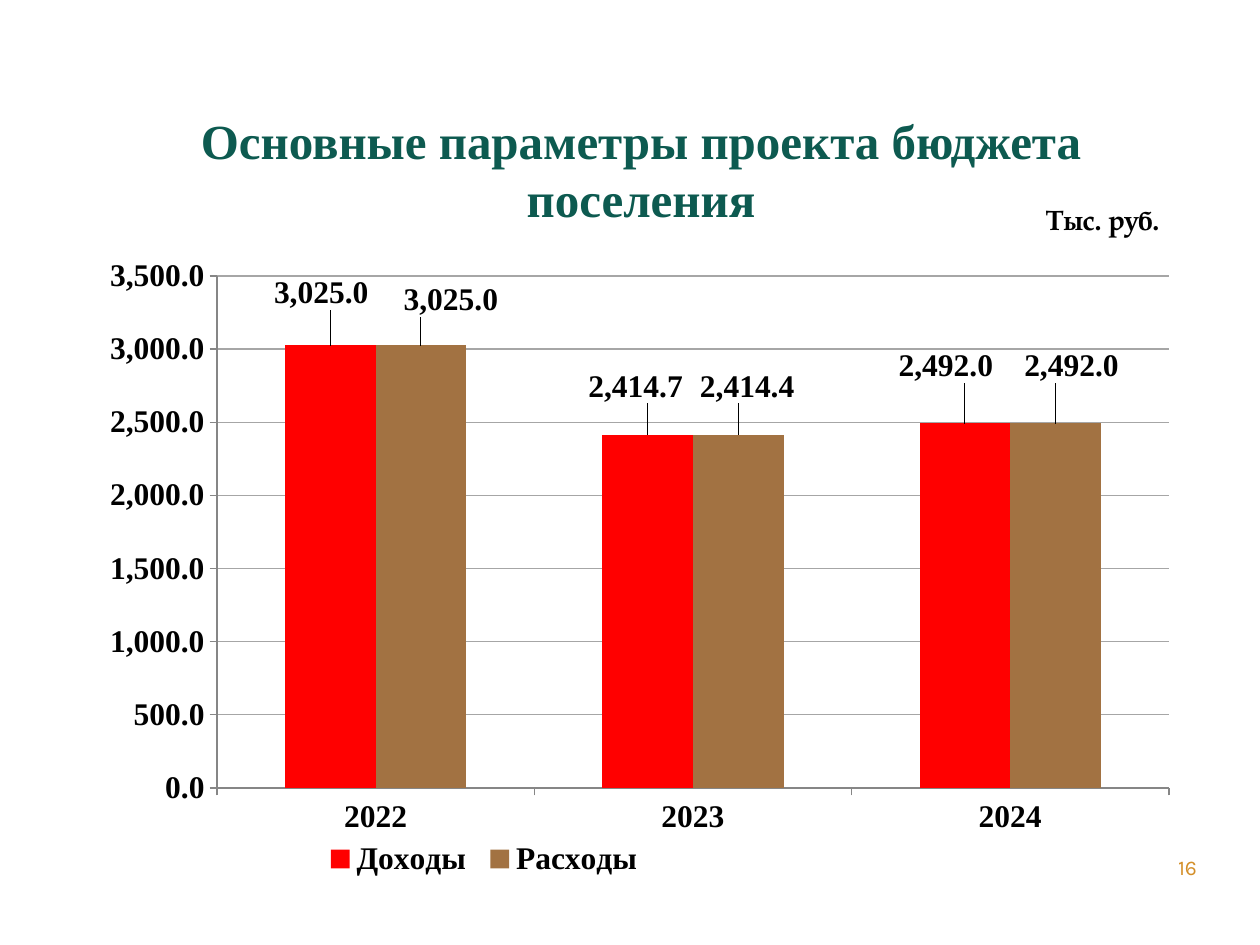
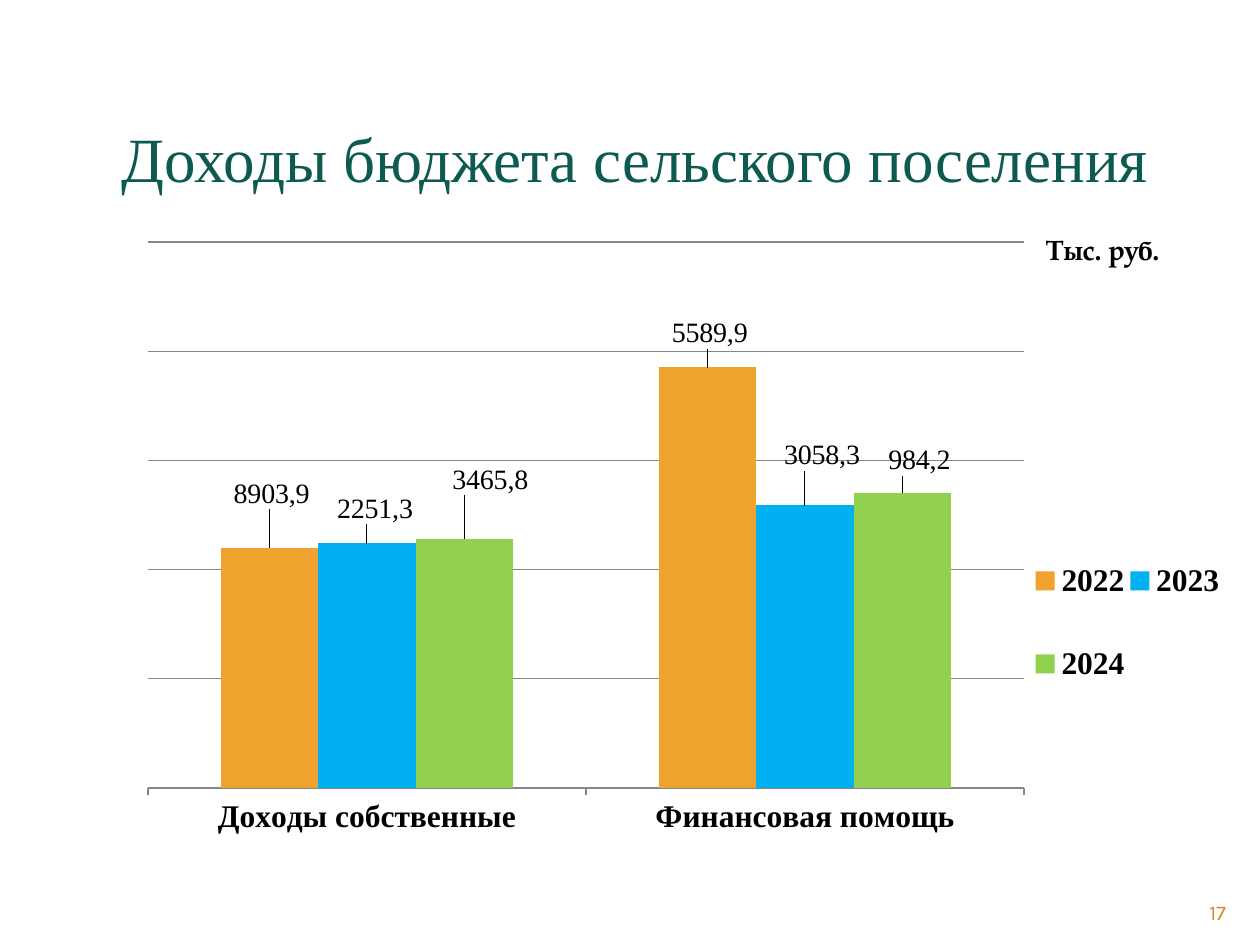
"""Build two budget slides, each with a title, a clustered column chart and a page number."""
from dataclasses import dataclass

from lxml.etree import SubElement
from pptx import Presentation
from pptx.chart.chart import Chart
from pptx.chart.data import CategoryChartData
from pptx.chart.series import BarSeries
from pptx.dml.color import RGBColor
from pptx.enum.chart import XL_CHART_TYPE as ChartType
from pptx.enum.chart import XL_LABEL_POSITION as LabelPos
from pptx.enum.chart import XL_LEGEND_POSITION as LegendPos
from pptx.enum.chart import XL_TICK_MARK as Tick
from pptx.enum.text import MSO_ANCHOR as Anchor
from pptx.enum.text import PP_ALIGN as Align
from pptx.oxml.ns import qn
from pptx.slide import Slide
from pptx.text.text import Font
from pptx.util import Emu, Pt

PX_PER_INCH = 126
SERIF = "Times New Roman"
GREEN, GOLD, BLACK, AXIS_GREY = "0D5A50", "D48F29", "000000", "868686"
NUMBER_FORMAT = "#,##0.0"
Box = tuple[int, int, int, int]


@dataclass
class TextStyle:
    size: int
    color: str = BLACK
    name: str = SERIF
    bold: bool = False


@dataclass
class Caption:
    text: str
    box: Box
    style: TextStyle
    align: Align = Align.LEFT
    wrap: bool = True
    inset: int = 6


@dataclass
class Label:
    shift: tuple[int, int]
    text: str = ""


@dataclass
class Columns:
    name: str
    color: str
    values: list[float]
    labels: list[Label]


@dataclass
class BudgetChart:
    box: Box
    plot: Box
    legend: Box
    legend_side: LegendPos
    categories: list[str]
    columns: list[Columns]
    maximum: int
    grid_color: str
    label_style: TextStyle
    show_values: bool = True


@dataclass
class BudgetSlide:
    captions: list[Caption]
    chart: BudgetChart


UNIT_STYLE = TextStyle(16, name="TeX Gyre Pagella", bold=True)
PAGE_STYLE = TextStyle(12, GOLD, "Karla")
CHART_STYLE = TextStyle(18, bold=True)


def px(length: int) -> Emu:
    """Turn px into EMU."""
    return Emu(round(length * 914400 / PX_PER_INCH))


def rgb(color: str) -> RGBColor:
    """Turn a hex string into a colour."""
    return RGBColor.from_string(color)


def set_all(target: object, values: dict[str, object]) -> None:
    """Set each named attribute of the target."""
    for attribute, value in values.items():
        setattr(target, attribute, value)


def style_font(font: Font, style: TextStyle) -> None:
    """Give a font its face, size, weight and colour."""
    set_all(font, {"name": style.name, "size": Pt(style.size), "bold": style.bold})
    font.color.rgb = rgb(style.color)


def title(text: str, box: Box, size: int, bold: bool = False) -> Caption:
    """Describe a slide title."""
    return Caption(text, box, TextStyle(size, GREEN, bold=bold), Align.CENTER, False, 12)


def unit_note(top: int) -> Caption:
    """Describe the note that names the unit."""
    return Caption("Тыс. руб.", (1033, top, 207, 47), UNIT_STYLE)


def page_number(text: str, box: Box) -> Caption:
    """Describe a page number."""
    return Caption(text, box, PAGE_STYLE, Align.RIGHT, inset=8)


def draw_caption(slide: Slide, caption: Caption) -> None:
    """Draw one line of text."""
    frame = slide.shapes.add_textbox(*map(px, caption.box)).text_frame
    set_all(frame, {
        "word_wrap": caption.wrap,
        "vertical_anchor": Anchor.TOP,
        "margin_left": px(13),
        "margin_right": px(13),
        "margin_top": px(caption.inset),
        "margin_bottom": px(caption.inset),
    })
    line = frame.paragraphs[0]
    line.alignment = caption.align
    run = line.add_run()
    run.text = caption.text
    style_font(run.font, caption.style)


def set_layout(parent, index: int, settings: dict[str, object]) -> None:
    """Replace the manual layout of a chart part."""
    for old in parent.findall(qn("c:layout")):
        parent.remove(old)
    layout = parent.makeelement(qn("c:layout"))
    parent.insert(index, layout)
    manual = SubElement(layout, qn("c:manualLayout"))
    for tag, value in settings.items():
        SubElement(manual, qn(f"c:{tag}")).set("val", str(value))


def box_layout(part: Box, chart_box: Box) -> dict[str, object]:
    """Express a slide box as fractions of the chart box."""
    left, top, width, height = chart_box
    return {
        "xMode": "edge", "yMode": "edge",
        "x": (part[0] - left) / width, "y": (part[1] - top) / height,
        "w": part[2] / width, "h": part[3] / height,
    }


def style_axes(chart: Chart, spec: BudgetChart) -> None:
    """Style both axes and the gridlines."""
    values = chart.value_axis
    set_all(values, {
        "minimum_scale": 0, "maximum_scale": spec.maximum, "major_unit": 500,
        "has_major_gridlines": True, "visible": spec.show_values,
    })
    set_all(values.tick_labels, {"number_format": NUMBER_FORMAT, "number_format_is_linked": False})
    grid = values.major_gridlines.format.line
    grid.color.rgb = rgb(spec.grid_color)
    grid.width = Pt(0.75)
    for axis in (values, chart.category_axis):
        axis.major_tick_mark = Tick.OUTSIDE
        axis.format.line.color.rgb = rgb(AXIS_GREY)
        style_font(axis.tick_labels.font, CHART_STYLE)


def style_columns(series: BarSeries, columns: Columns, spec: BudgetChart) -> None:
    """Colour one series and place its labels."""
    series.format.fill.solid()
    series.format.fill.fore_color.rgb = rgb(columns.color)
    labels = series.data_labels
    set_all(labels, {
        "show_value": True, "number_format": NUMBER_FORMAT,
        "number_format_is_linked": False, "position": LabelPos.OUTSIDE_END,
    })
    style_font(labels.font, spec.label_style)
    for index, label in enumerate(columns.labels):
        point_label = series.points[index].data_label
        if label.text:
            run = point_label.text_frame.paragraphs[0].add_run()
            run.text = label.text
            style_font(run.font, spec.label_style)
        else:
            style_font(point_label.font, spec.label_style)
        point_label.position = LabelPos.OUTSIDE_END
    point_elements = labels._element.findall(qn("c:dLbl"))
    for element, label in zip(point_elements, columns.labels):
        shift_x, shift_y = label.shift
        set_layout(element, 1, {"x": shift_x / spec.box[2], "y": shift_y / spec.box[3]})


def draw_chart(slide: Slide, spec: BudgetChart) -> None:
    """Draw the column chart with its legend."""
    data = CategoryChartData(number_format=NUMBER_FORMAT)
    data.categories = spec.categories
    for columns in spec.columns:
        data.add_series(columns.name, columns.values)
    chart = slide.shapes.add_chart(ChartType.COLUMN_CLUSTERED, *map(px, spec.box), data).chart
    set_all(chart, {"has_title": False, "has_legend": True})
    style_font(chart.font, CHART_STYLE)
    style_font(chart.legend.font, CHART_STYLE)
    set_all(chart.legend, {"position": spec.legend_side, "include_in_layout": False})
    set_all(chart.plots[0], {"gap_width": 150, "overlap": 0, "vary_by_categories": False})
    style_axes(chart, spec)
    for series, columns in zip(chart.plots[0].series, spec.columns):
        style_columns(series, columns, spec)
    plot_area = chart._chartSpace.find(f".//{qn('c:plotArea')}")
    set_layout(plot_area, 0, {"layoutTarget": "inner", **box_layout(spec.plot, spec.box)})
    set_layout(chart.legend._element, 1, box_layout(spec.legend, spec.box))


PARAMETERS = BudgetSlide(
    [
        title("Основные параметры проекта бюджета поселения", (129, 98, 1024, 105), 28, True),
        page_number("16", (903, 847, 307, 79)),
        unit_note(197),
    ],
    BudgetChart(
        box=(88, 246, 1102, 659), plot=(217, 276, 952, 512), legend=(317, 840, 334, 38),
        legend_side=LegendPos.BOTTOM, categories=["2022", "2023", "2024"],
        columns=[
            Columns("Доходы", "FF0000", [3025, 2414.7, 2492],
                    [Label((-9, -30)), Label((-12, -26)), Label((-19, -35))]),
            Columns("Расходы", "A27242", [3025, 2414.4, 2492],
                    [Label((30, -23)), Label((9, -26)), Label((16, -35))]),
        ],
        maximum=3500, grid_color="A6A6A6", label_style=CHART_STYLE,
    ),
)
INCOME = BudgetSlide(
    [
        title("Доходы бюджета сельского поселения", (49, 108, 1172, 106), 36),
        unit_note(227),
        page_number("17", (1134, 892, 105, 34)),
    ],
    BudgetChart(
        box=(29, 193, 1201, 752), plot=(148, 242, 876, 546), legend=(1030, 515, 195, 215),
        legend_side=LegendPos.RIGHT, categories=["Доходы собственные", "Финансовая помощь"],
        columns=[
            Columns("2022", "F0A22E", [1099.3, 1925.7],
                    [Label((2, -33), "8903,9"), Label((2, -13), "5589,9")]),
            Columns("2023", "00B0F0", [1119.3, 1295.1],
                    [Label((8, -14), "2251,3"), Label((17, -29), "3058,3")]),
            Columns("2024", "92D050", [1141.3, 1350.7],
                    [Label((26, -38), "3465,8"), Label((17, -12), "984,2")]),
        ],
        maximum=2500, grid_color=AXIS_GREY, label_style=TextStyle(16), show_values=False,
    ),
)


def main() -> None:
    """Build and save the presentation."""
    deck = Presentation()
    set_all(deck, {"slide_width": px(1260), "slide_height": px(945)})
    for content in (PARAMETERS, INCOME):
        slide = deck.slides.add_slide(deck.slide_layouts[6])
        draw_chart(slide, content.chart)
        for caption in content.captions:
            draw_caption(slide, caption)
    deck.save("out.pptx")


if __name__ == "__main__":
    main()
